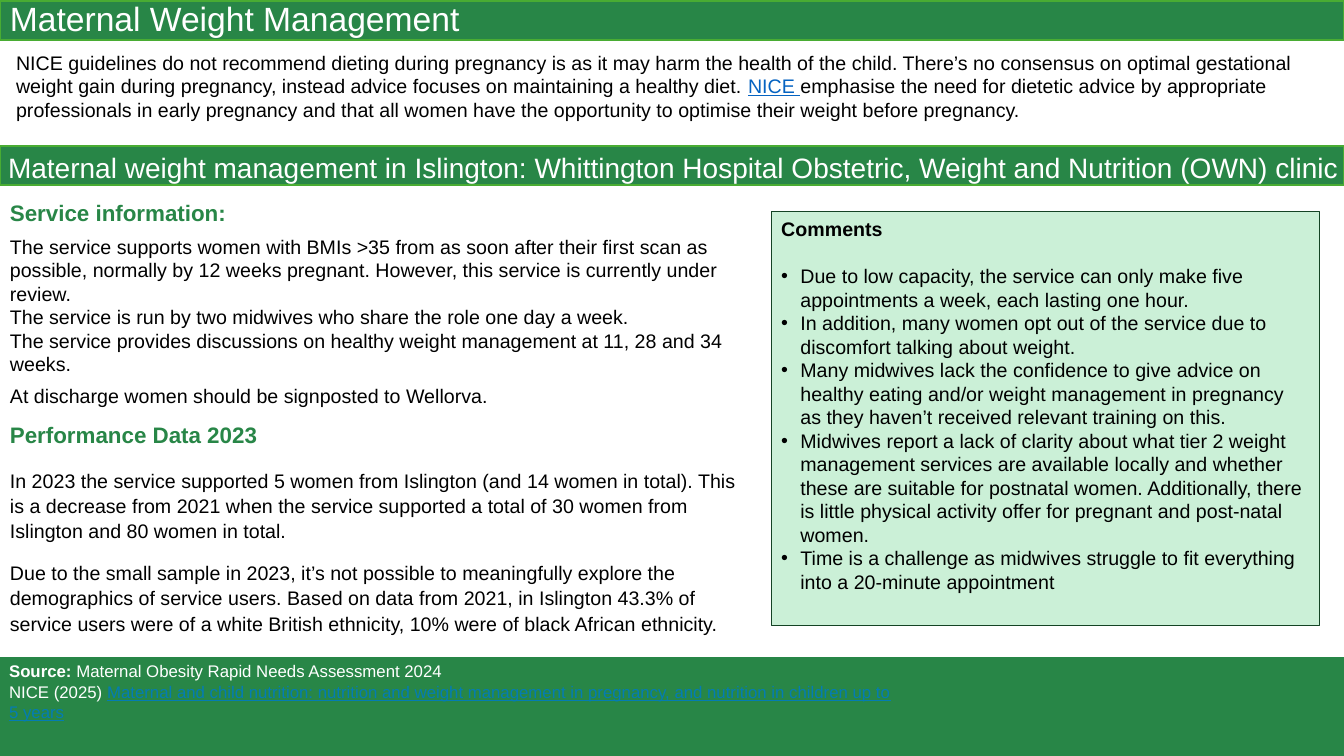
from dataclasses import dataclass

from lxml import etree
from pptx import Presentation
from pptx.dml.color import RGBColor
from pptx.enum.shapes import MSO_SHAPE
from pptx.enum.text import MSO_ANCHOR, PP_ALIGN
from pptx.oxml.ns import qn
from pptx.slide import Slide
from pptx.util import Emu, Pt

EMU_PER_PX = 9144
SLIDE_WIDTH, SLIDE_HEIGHT = 1333, 750
BAR_HEIGHT = 39
BULLET_INDENT = 19
FONT_NAME = "Arial"

RECTANGLE = MSO_SHAPE.RECTANGLE
TOP, MIDDLE = MSO_ANCHOR.TOP, MSO_ANCHOR.MIDDLE
LEFT = PP_ALIGN.LEFT

GREEN = RGBColor(0x28, 0x86, 0x47)
BRIGHT_GREEN = RGBColor(0x49, 0xAC, 0x33)
PALE_GREEN = RGBColor(0xCB, 0xF0, 0xD7)
DARK_GREEN = RGBColor(0x14, 0x43, 0x24)
LINK_BLUE = RGBColor(0x05, 0x63, 0xC1)
FOOTER_BLUE = RGBColor(0x04, 0x7C, 0xB3)
BLACK = RGBColor(0, 0, 0)
WHITE = RGBColor(0xFF, 0xFF, 0xFF)


@dataclass(frozen=True)
class TextRun:
    text: str
    size: int = 14
    color: RGBColor = BLACK
    bold: bool = False
    underline: bool = False


@dataclass(frozen=True)
class TextParagraph:
    runs: list[TextRun]
    before: int = 0
    after: int = 0
    spacing: float = 1.0
    bullet: bool = False


@dataclass(frozen=True)
class Panel:
    """A rectangle in px; without fill and line it is a plain text box."""
    left: int
    top: int
    width: int
    height: int
    paragraphs: list[TextParagraph]
    fill: RGBColor | None = None
    line: RGBColor | None = None
    line_width: float = 0.75
    margins: tuple[int, int] = (0, 0)
    anchor: MSO_ANCHOR = TOP


def px(length: int) -> Emu:
    return Emu(length * EMU_PER_PX)


def heading(text: str, after: int = 0) -> TextParagraph:
    return TextParagraph([TextRun(text, 16, GREEN, bold=True)], after=after, spacing=1.07)


def body(text: str, before: int = 0, after: int = 0, spacing: float = 1.0) -> TextParagraph:
    return TextParagraph([TextRun(text)], before, after, spacing)


def title_bar(top: int, text: str, size: int, margin: int, spacing: float) -> Panel:
    title = TextParagraph([TextRun(text, size, WHITE)], spacing=spacing)
    return Panel(0, top, SLIDE_WIDTH, BAR_HEIGHT, [title], GREEN, BRIGHT_GREEN, 1.5,
                 (margin, 0), MIDDLE)


COMMENTS = [
    "Due to low capacity, the service can only make five appointments a week, each lasting "
    "one hour.",
    "In addition, many women opt out of the service due to discomfort talking about weight.",
    "Many midwives lack the confidence to give advice on healthy eating and/or weight "
    "management in pregnancy as they haven’t received relevant training on this.",
    "Midwives report a lack of clarity about what tier 2 weight management services are "
    "available locally and whether these are suitable for postnatal women. Additionally, "
    "there is little physical activity offer for pregnant and post-natal women.",
    "Time is a challenge as midwives struggle to fit everything into a 20-minute appointment",
]

INTRODUCTION = [TextParagraph([
    TextRun("NICE guidelines do not recommend dieting during pregnancy is as it may harm the "
            "health of the child. There’s no consensus on optimal gestational weight gain "
            "during pregnancy, instead advice focuses on maintaining a healthy diet. "),
    TextRun("NICE ", color=LINK_BLUE, underline=True),
    TextRun("emphasise the need for dietetic advice by appropriate professionals in early "
            "pregnancy and that all women have the opportunity to optimise their weight "
            "before pregnancy."),
])]

SERVICE = [
    heading("Service information:"),
    body("The service supports women with BMIs >35 from as soon after their first scan as "
         "possible, normally by 12 weeks pregnant. However, this service is currently under "
         "review.", before=6),
    body("The service is run by two midwives who share the role one day a week."),
    body("The service provides discussions on healthy weight management at 11, 28 and 34 "
         "weeks."),
    body("At discharge women should be signposted to Wellorva.", before=6, after=8),
    heading("Performance Data 2023", after=8),
    body("In 2023 the service supported 5 women from Islington (and 14 women in total). This "
         "is a decrease from 2021 when the service supported a total of 30 women from "
         "Islington and 80 women in total.", before=6, after=6, spacing=1.07),
    body("Due to the small sample in 2023, it’s not possible to meaningfully explore the "
         "demographics of service users. Based on data from 2021, in Islington 43.3% of "
         "service users were of a white British ethnicity, 10% were of black African "
         "ethnicity.", before=6, after=6, spacing=1.07),
]

COMMENT_PARAGRAPHS = [TextParagraph([TextRun("Comments", bold=True)], after=17)] + [
    TextParagraph([TextRun(comment)], bullet=True) for comment in COMMENTS
]

SOURCES = [
    TextParagraph([
        TextRun("Source: ", 12, WHITE, bold=True),
        TextRun("Maternal Obesity Rapid Needs Assessment 2024", 12, WHITE),
    ]),
    TextParagraph([
        TextRun("NICE (2025) ", 12, WHITE),
        TextRun("Maternal and child nutrition: nutrition and weight management in pregnancy, "
                "and nutrition in children up to 5 years", 12, FOOTER_BLUE, underline=True),
    ]),
]

PANELS = [
    Panel(0, 652, SLIDE_WIDTH, 98, [], GREEN),
    title_bar(1, "Maternal Weight Management", 24, margin=10, spacing=0.9),
    Panel(16, 50, 1304, 125, INTRODUCTION),
    title_bar(145, "Maternal weight management in Islington: Whittington Hospital Obstetric, "
              "Weight and Nutrition (OWN) clinic", 20, margin=8, spacing=1.07),
    Panel(0, 191, 751, 447, SERVICE, margins=(10, 5)),
    Panel(765, 210, 544, 411, COMMENT_PARAGRAPHS, PALE_GREEN, DARK_GREEN, margins=(10, 5)),
    Panel(9, 656, 888, 46, SOURCES),
]


def add_panel(slide: Slide, panel: Panel) -> None:
    box = (px(panel.left), px(panel.top), px(panel.width), px(panel.height))
    if panel.fill is None:
        shape = slide.shapes.add_textbox(*box)
    else:
        shape = slide.shapes.add_shape(RECTANGLE, *box)
        shape.shadow.inherit = False
        shape.fill.solid()
        shape.fill.fore_color.rgb = panel.fill
        if panel.line is None:
            shape.line.fill.background()
        else:
            shape.line.color.rgb = panel.line
            shape.line.width = Pt(panel.line_width)

    frame = shape.text_frame
    frame.word_wrap = True
    frame.vertical_anchor = panel.anchor
    side, end = panel.margins
    frame.margin_left = px(side)
    frame.margin_right = px(side if panel.anchor == TOP else 0)
    frame.margin_top = frame.margin_bottom = px(end)
    for index, content in enumerate(panel.paragraphs):
        paragraph = frame.add_paragraph() if index else frame.paragraphs[0]
        if content.bullet:
            properties = paragraph._p.get_or_add_pPr()
            properties.set("marL", str(px(BULLET_INDENT)))
            properties.set("indent", str(px(-BULLET_INDENT)))
            etree.SubElement(properties, qn("a:buFont")).set("typeface", FONT_NAME)
            etree.SubElement(properties, qn("a:buChar")).set("char", "•")
        paragraph.alignment = LEFT
        paragraph.line_spacing = content.spacing
        paragraph.space_before = Pt(content.before)
        paragraph.space_after = Pt(content.after)
        for text_run in content.runs:
            run = paragraph.add_run()
            run.text = text_run.text
            run.font.name = FONT_NAME
            run.font.size = Pt(text_run.size)
            run.font.color.rgb = text_run.color
            run.font.bold = text_run.bold
            run.font.underline = text_run.underline


def main() -> None:
    presentation = Presentation()
    presentation.slide_width = px(SLIDE_WIDTH)
    presentation.slide_height = px(SLIDE_HEIGHT)
    slide = presentation.slides.add_slide(presentation.slide_layouts[6])
    for panel in PANELS:
        add_panel(slide, panel)
    presentation.save("out.pptx")


if __name__ == "__main__":
    main()
